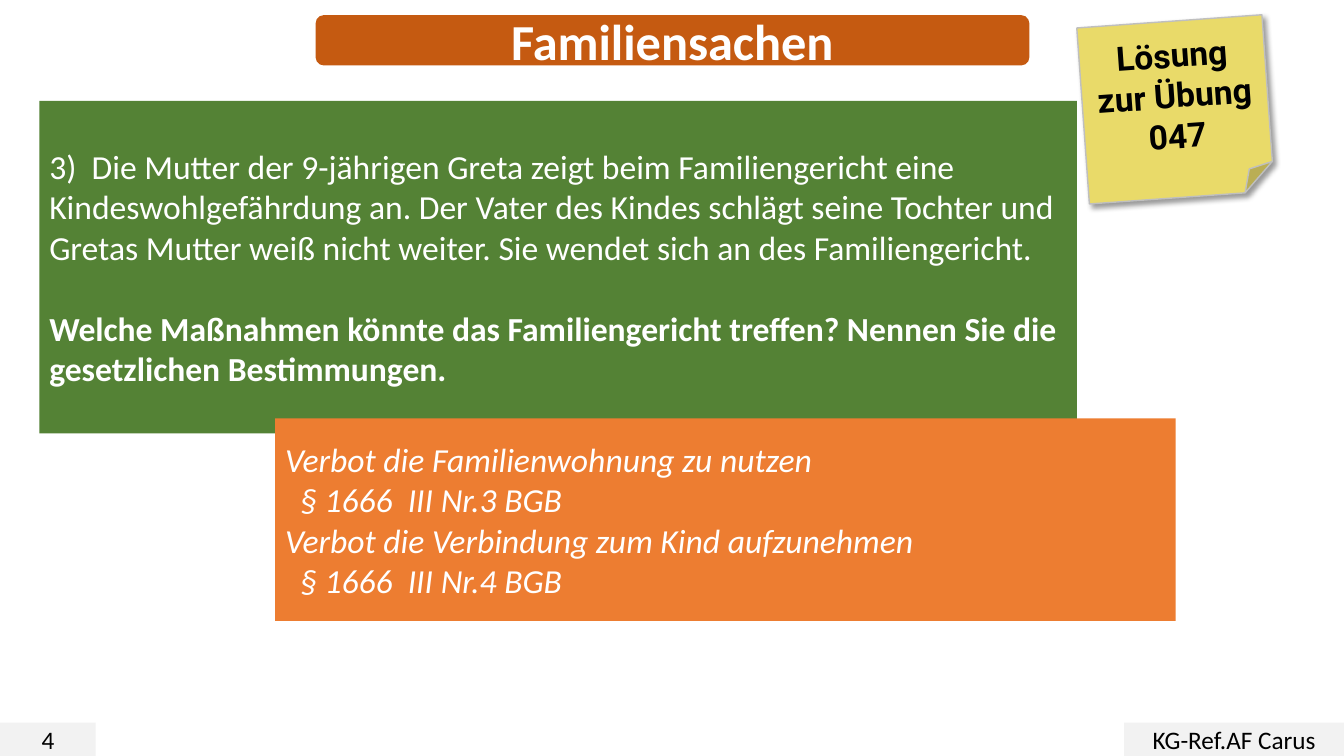
"""Build the Familiensachen solution slide."""
from lxml import etree
from pptx import Presentation
from pptx.dml import color
from pptx.enum import shapes, text
from pptx.oxml import ns
from pptx import util as u

WHITE, BLACK = "FFFFFF", "000000"
LEFT, CENTER = text.PP_ALIGN.LEFT, text.PP_ALIGN.CENTER
RECT = shapes.MSO_SHAPE.RECTANGLE
FOOTER = {"size": 18, "color": BLACK, "align": CENTER}
BODY = {"size": 24, "color": WHITE, "align": LEFT}

CASE = [
    ("3)  Die Mutter der 9-jährigen Greta zeigt beim Familiengericht eine "
     "Kindeswohlgefährdung an. Der Vater des Kindes schlägt seine Tochter und "
     "Gretas Mutter weiß nicht weiter. Sie wendet sich an des Familiengericht.", {}),
    ("Welche Maßnahmen könnte das Familiengericht treffen? Nennen Sie die "
     "gesetzlichen Bestimmungen.", {"bold": True, "before": 29.3}),
]
MEASURES = [
    ("Verbot die Familienwohnung zu nutzen", "§ 1666  III Nr.3 BGB"),
    ("Verbot die Verbindung zum Kind aufzunehmen", "§ 1666  III Nr.4 BGB"),
]
ANSWER = [(line, {"italic": True, "indent": indent})
          for pair in MEASURES for line, indent in zip(pair, (0, 0.15))]

BOXES = [
    (shapes.MSO_SHAPE.ROUNDED_RECTANGLE, (3.13, 0.15, 7.08, 0.5), "C55A11",
     [("Familiensachen", {"size": 36, "color": WHITE, "align": CENTER, "bold": True})]),
    (RECT, (0, 7.17, 0.95, 0.33), "F2F2F2", [("4", FOOTER)]),
    (RECT, (11.15, 7.17, 2.18, 0.33), "F2F2F2", [("KG-Ref.AF Carus", FOOTER)]),
    (RECT, (0.39, 1, 10.29, 3.3), "548235", CASE),
    (shapes.MSO_SHAPE.FOLDED_CORNER, (10.74, 0.21, 1.84, 1.75), "E9DA69",
     [("Lösung zur Übung 047", {"color": BLACK, "align": CENTER, "bold": True,
                                "name": "Roboto"})]),
    (RECT, (2.73, 4.15, 8.93, 2.01), "ED7D31", ANSWER),
]


def rgb(value):
    """Turn a hex string into a colour."""
    return color.RGBColor.from_string(value)


def add_line(p, line, fmt):
    """Write one formatted paragraph."""
    fmt = {**BODY, "name": "Calibri", **fmt}
    p.alignment = fmt["align"]
    p.space_before = u.Pt(fmt.get("before", 0))
    if fmt.get("indent"):
        p._p.get_or_add_pPr().set("marL", str(u.Inches(fmt["indent"])))
    r = p.add_run()
    r.text = line
    font = {"size": u.Pt(fmt["size"]), "name": fmt["name"],
            "bold": fmt.get("bold", False), "italic": fmt.get("italic", False)}
    for key, value in font.items():
        setattr(r.font, key, value)
    r.font.color.rgb = rgb(fmt["color"])


def add_box(s, kind, at, fill, lines):
    """Add one filled shape with its text."""
    sp = s.shapes.add_shape(kind, *map(u.Inches, at))
    sp.shadow.inherit = False
    sp.fill.solid()
    sp.fill.fore_color.rgb = rgb(fill)
    sp.line.fill.background()
    tf = sp.text_frame
    tf.word_wrap = True
    tf.vertical_anchor = text.MSO_ANCHOR.MIDDLE
    for i, (line, fmt) in enumerate(lines):
        add_line(tf.add_paragraph() if i else tf.paragraphs[0], line, fmt)
    return sp


def style_note(sp):
    """Tilt the sticky note and give it an outline and a soft shadow."""
    sp.rotation = 355.9
    sp.line.color.rgb = rgb("BFBFBF")
    sp.line.width = u.Pt(1)
    effects = sp._element.spPr.find(ns.qn("a:effectLst"))
    shadow = etree.SubElement(effects, ns.qn("a:outerShdw"), blurRad=str(u.Pt(4)),
                              dist=str(u.Pt(3)), dir=str(45 * 60000),
                              algn="tl", rotWithShape="0")
    tint = etree.SubElement(shadow, ns.qn("a:srgbClr"), val=BLACK)
    etree.SubElement(tint, ns.qn("a:alpha"), val="40000")


def main():
    """Create and save the slide."""
    prs = Presentation()
    prs.slide_width, prs.slide_height = u.Inches(13.33), u.Inches(7.5)
    s = prs.slides.add_slide(prs.slide_layouts[6])
    for box in BOXES:
        sp = add_box(s, *box)
        if box[0] == shapes.MSO_SHAPE.FOLDED_CORNER:
            style_note(sp)
    prs.save("out.pptx")


if __name__ == "__main__":
    main()
